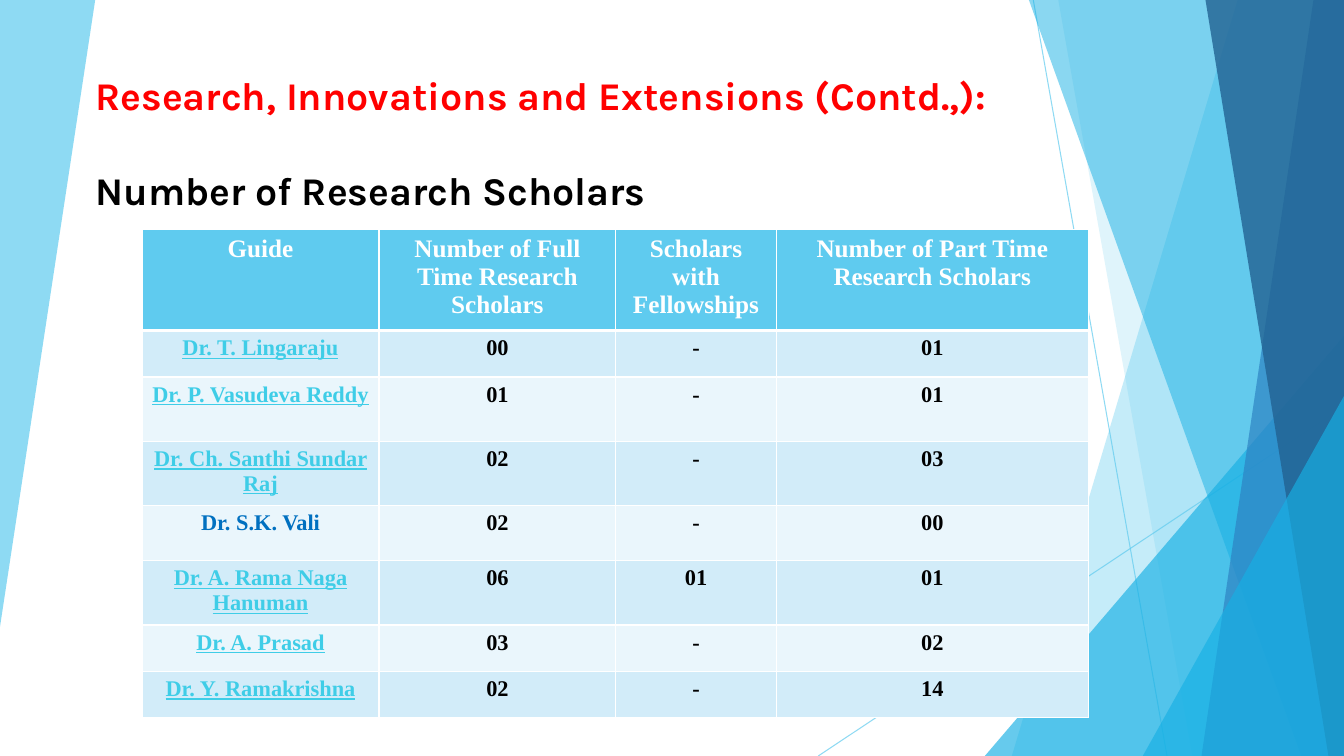
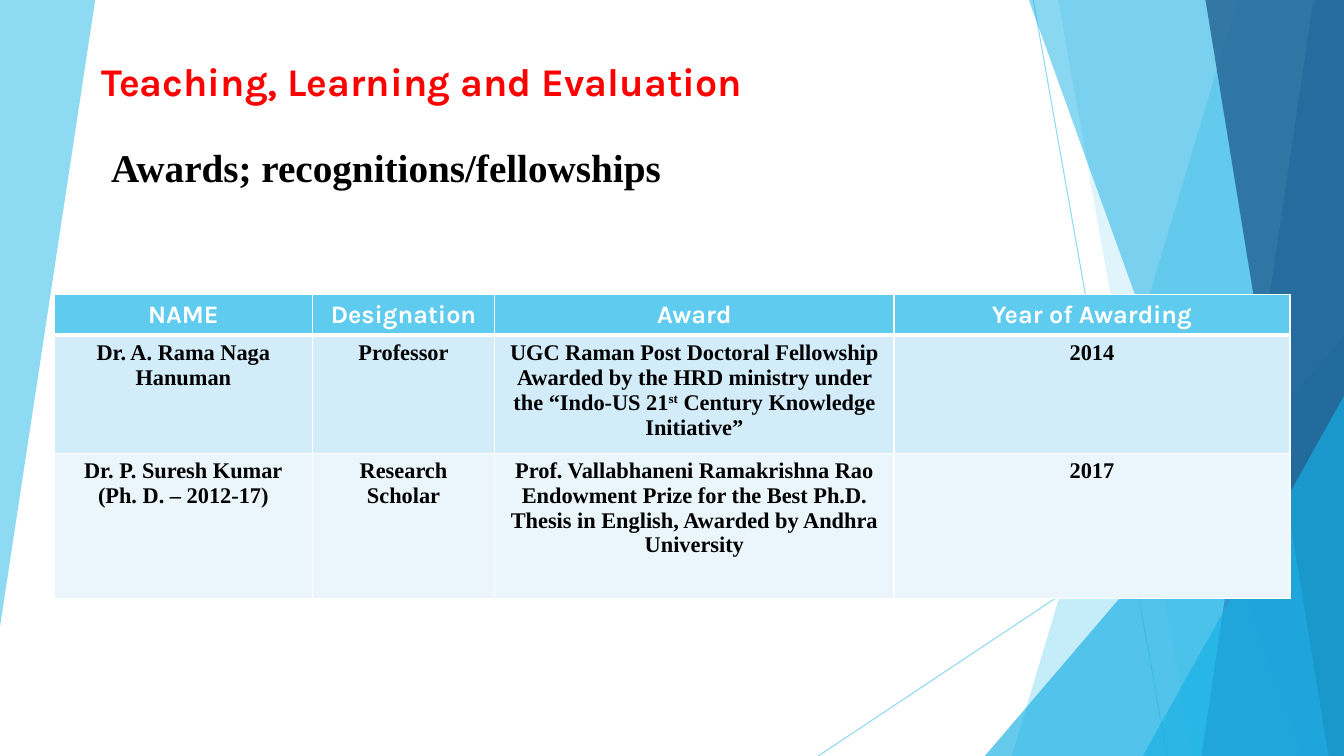
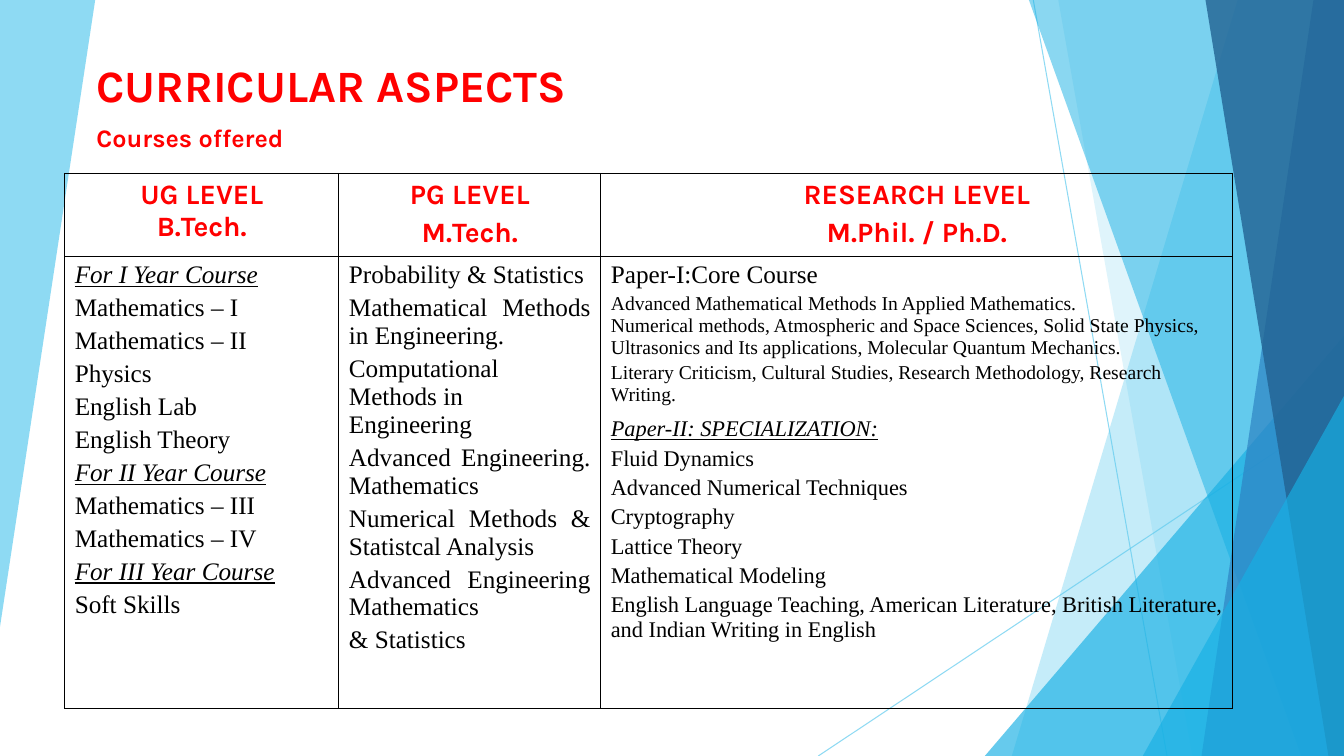
from dataclasses import dataclass, replace

from lxml import etree
from pptx import Presentation
from pptx.dml.color import RGBColor
from pptx.enum.shapes import MSO_CONNECTOR, MSO_SHAPE
from pptx.enum.text import PP_ALIGN
from pptx.oxml.ns import qn
from pptx.util import Cm, Pt

LEFT, CENTER, JUSTIFY = PP_ALIGN.LEFT, PP_ALIGN.CENTER, PP_ALIGN.JUSTIFY
TRIANGLE = MSO_SHAPE.ISOSCELES_TRIANGLE
STRAIGHT = MSO_CONNECTOR.STRAIGHT

SKY = RGBColor(0x5F, 0xCB, 0xEF)
CYAN = RGBColor(0x17, 0xB0, 0xE4)
BLUE = RGBColor(0x2E, 0x83, 0xC3)
NAVY = RGBColor(0x22, 0x62, 0x92)
TURQUOISE = RGBColor(0x3F, 0xCD, 0xE7)
ROYAL = RGBColor(0x00, 0x70, 0xC0)
BAND_DARK = RGBColor(0xD2, 0xEC, 0xF9)
BAND_LIGHT = RGBColor(0xEA, 0xF6, 0xFC)
RED = RGBColor(0xFF, 0x00, 0x00)
BLACK = RGBColor(0x00, 0x00, 0x00)
WHITE = RGBColor(0xFF, 0xFF, 0xFF)

SANS, SERIF = "Karla", "Times New Roman"
WIDTH, HEIGHT = 33.87, 19.05


@dataclass(frozen=True)
class Style:
    """Paragraph look; before is the space above as a share of the size."""
    size: int
    font: str = SERIF
    color: RGBColor = BLACK
    bold: bool = False
    italic: bool = False
    underline: bool = False
    align: int = LEFT
    before: float = 0.2


TITLE = Style(28, SANS, RED, bold=True)
HEADER = Style(18, SERIF, WHITE, bold=True, align=CENTER)
BODY = Style(16, SERIF, BLACK, bold=True, align=CENTER)
GUIDE_LINKED = replace(BODY, color=TURQUOISE, underline=True)
GUIDE_PLAIN = replace(BODY, color=ROYAL)
LEVEL = Style(20, SANS, RED, bold=True, align=CENTER)
COURSE = Style(18, align=JUSTIFY)
YEAR = replace(COURSE, italic=True, underline=True)
PAPER = Style(14)
TOPIC = Style(16, align=JUSTIFY)
SPECIALIZATION = Style(16, italic=True, underline=True, before=0.5)


def write(tf, paragraphs):
    """Fill a text frame with (text, style) pairs; ^ encloses superscript."""
    tf.word_wrap = True
    for i, (text, style) in enumerate(paragraphs):
        p = tf.add_paragraph() if i else tf.paragraphs[0]
        first, *rest = text.split("^")
        p.text = first
        for n, piece in enumerate(rest):
            r = p.add_run()
            r.text = piece
            if n % 2 == 0:
                r._r.get_or_add_rPr().set("baseline", "30000")
        p.alignment = style.align
        if i:
            p.space_before = Pt(style.size * style.before)
        font = p.font
        font.name, font.size = style.font, Pt(style.size)
        font.bold, font.italic = style.bold, style.italic
        font.underline = style.underline
        font.color.rgb = style.color


def add_text(slide, x, y, w, h, text, style):
    box = slide.shapes.add_textbox(Cm(x), Cm(y), Cm(w), Cm(h))
    write(box.text_frame, [(text, style)])


def set_alpha(shape, percent):
    color = shape.element.find(".//" + qn("a:srgbClr"))
    etree.SubElement(color, qn("a:alpha")).set("val", str(percent * 1000))


def paint(sp, color, percent):
    sp.shadow.inherit = False
    sp.fill.solid()
    sp.fill.fore_color.rgb = color
    sp.line.fill.background()
    set_alpha(sp, percent)


def add_polygon(slide, points, color, percent):
    start, *others = [(Cm(x), Cm(y)) for x, y in points]
    builder = slide.shapes.build_freeform(*start)
    builder.add_line_segments(others, close=True)
    paint(builder.convert_to_shape(), color, percent)


def add_band(slide, top_x, bottom_x, color, percent):
    """Full-height band from a slanted left edge to the slide's right edge."""
    points = [(top_x, 0), (WIDTH, 0), (WIDTH, HEIGHT), (bottom_x, HEIGHT)]
    add_polygon(slide, points, color, percent)


def add_corner(slide, x, y):
    """Right triangle filling the bottom right corner from (x, y)."""
    sp = slide.shapes.add_shape(TRIANGLE, Cm(x), Cm(y),
                                Cm(WIDTH - x), Cm(HEIGHT - y))
    sp.adjustments[0] = 1
    paint(sp, CYAN, 66)


def add_hairline(slide, x1, y1, x2, y2):
    line = slide.shapes.add_connector(STRAIGHT, Cm(x1), Cm(y1), Cm(x2), Cm(y2))
    line.line.color.rgb = SKY
    line.line.width = Pt(0.75)
    set_alpha(line, 70)
    etree.SubElement(line.element.spPr, qn("a:effectLst"))


def decorate_layout(layout, slide):
    """Draw the backdrop on an empty slide and move it to the shared layout."""
    for ph in list(layout.placeholders):
        ph.element.getparent().remove(ph.element)
    add_polygon(slide, [(0, 0), (2.4, 0), (0, 15.8)], SKY, 70)
    add_hairline(slide, 26.04, 0, 29.41, HEIGHT)
    add_hairline(slide, WIDTH, 10.24, 20.62, HEIGHT)
    add_band(slide, 31.19, 25.5, SKY, 36)
    add_band(slide, 26.67, 30.05, SKY, 20)
    add_corner(slide, 24.82, 8.46)
    add_band(slide, 25.93, 32.79, CYAN, 50)
    add_band(slide, 33.1, 30.28, BLUE, 70)
    add_band(slide, 30.38, 33.48, NAVY, 80)
    add_corner(slide, 28.8, 9.98)
    for sp in list(slide.shapes):
        layout.shapes.element.append(sp.element)


def set_borders(cell, color, top=1, bottom=1):
    tc_pr = cell._tc.get_or_add_tcPr()
    widths = {"a:lnL": 1, "a:lnR": 1, "a:lnT": top, "a:lnB": bottom}
    for tag, width in widths.items():
        ln = etree.SubElement(tc_pr, qn(tag), w=str(Pt(width)))
        fill = etree.SubElement(ln, qn("a:solidFill"))
        etree.SubElement(fill, qn("a:srgbClr"), val=str(color))


def add_grid(slide, x, y, widths, heights, rows, banded=True):
    """Table whose cells are lists of (text, style) pairs."""
    frame = slide.shapes.add_table(len(heights), len(widths), Cm(x), Cm(y),
                                   Cm(sum(widths)), Cm(sum(heights)))
    table = frame.table
    table.first_row = table.horz_banding = False
    for column, width in zip(table.columns, widths):
        column.width = Cm(width)
    for row, height in zip(table.rows, heights):
        row.height = Cm(height)
    for i, row in enumerate(rows):
        for j, paragraphs in enumerate(row):
            cell = table.cell(i, j)
            write(cell.text_frame, paragraphs)
            if not banded:
                set_borders(cell, BLACK)
                cell.fill.background()
                continue
            set_borders(cell, WHITE, top=3 if i == 1 else 1,
                        bottom=3 if i == 0 else 1)
            cell.fill.solid()
            band = BAND_DARK if i % 2 else BAND_LIGHT
            cell.fill.fore_color.rgb = band if i else SKY


def styled(texts, style):
    return [(text, style) for text in texts]


def cells(texts, style):
    """One single-paragraph cell for each text."""
    return [[pair] for pair in styled(texts, style)]


def scholars_slide(slide):
    add_text(slide, 2.16, 1.68, 23.3, 1.45,
             "Research, Innovations and Extensions (Contd.,):", TITLE)
    add_text(slide, 2.16, 4.06, 22.43, 1.45, "Number of Research Scholars",
             replace(TITLE, color=BLACK))
    header = ["Guide", "Number of Full Time Research Scholars",
              "Scholars with Fellowships",
              "Number of Part Time Research Scholars"]
    scholars = [
        ("Dr. T. Lingaraju", GUIDE_LINKED, "00", "-", "01"),
        ("Dr. P. Vasudeva Reddy", GUIDE_LINKED, "01", "-", "01"),
        ("Dr. Ch. Santhi Sundar Raj", GUIDE_LINKED, "02", "-", "03"),
        ("Dr. S.K. Vali", GUIDE_PLAIN, "02", "-", "00"),
        ("Dr. A. Rama Naga Hanuman", GUIDE_LINKED, "06", "01", "01"),
        ("Dr. A. Prasad", GUIDE_LINKED, "03", "-", "02"),
        ("Dr. Y. Ramakrishna", GUIDE_LINKED, "02", "-", "14"),
    ]
    rows = [cells(header, HEADER)]
    rows += [[[(guide, style)], *cells(counts, BODY)]
             for guide, style, *counts in scholars]
    add_grid(slide, 3.58, 5.79, [5.97, 5.97, 4.04, 7.87],
             [2.54, 1.17, 1.62, 1.62, 1.39, 1.62, 1.17, 1.17], rows)


def awards_slide(slide):
    add_text(slide, 2.31, 1.32, 19.69, 1.45,
             "Teaching, Learning and Evaluation", TITLE)
    add_text(slide, 2.55, 3.48, 27.8, 1.45, "Awards; recognitions/fellowships",
             replace(TITLE, font=SERIF, color=BLACK))
    header = ["NAME", "Designation", "Award", "Year of Awarding"]
    awards = [
        ["Dr. A. Rama Naga Hanuman", "Professor",
         "UGC Raman Post Doctoral Fellowship Awarded by the HRD ministry "
         "under the “Indo-US 21^st^ Century Knowledge Initiative”", "2014"],
        ["Dr. P. Suresh Kumar\n(Ph. D. – 2012-17)", "Research Scholar",
         "Prof. Vallabhaneni Ramakrishna Rao Endowment Prize for the Best "
         "Ph.D. Thesis in English, Awarded by Andhra University", "2017"],
    ]
    rows = [cells(header, replace(HEADER, font=SANS))]
    rows += [cells(award, BODY) for award in awards]
    add_grid(slide, 1.37, 7.43, [6.5, 4.6, 10.06, 9.98],
             [1.02, 2.97, 3.66], rows)


def courses_slide(slide):
    add_text(slide, 2.18, 1.32, 15.95, 1.63, "CURRICULAR ASPECTS",
             replace(TITLE, size=32))
    add_text(slide, 2.18, 2.95, 18.87, 1.02, "Courses offered",
             replace(TITLE, size=18))
    levels = [["UG LEVEL\nB.Tech."], ["PG LEVEL", "M.Tech."],
              ["RESEARCH LEVEL", "M.Phil. / Ph.D."]]
    undergraduate = [
        ("For I Year Course", YEAR),
        *styled(["Mathematics – I", "Mathematics – II", "Physics",
                 "English Lab", "English Theory"], COURSE),
        ("For II Year Course", YEAR),
        *styled(["Mathematics – III", "Mathematics – IV"], COURSE),
        ("For III Year Course", YEAR),
        ("Soft Skills", COURSE),
    ]
    postgraduate = [
        *styled(["Probability & Statistics",
                 "Mathematical Methods in Engineering."], COURSE),
        ("Computational Methods in Engineering", replace(COURSE, align=LEFT)),
        *styled(["Advanced Engineering. Mathematics",
                 "Numerical Methods & Statistcal Analysis",
                 "Advanced Engineering Mathematics", "& Statistics"], COURSE),
    ]
    research = [
        ("Paper-I:Core Course", COURSE),
        *styled(["Advanced Mathematical Methods In Applied Mathematics.\n"
                 "Numerical methods, Atmospheric and Space Sciences, Solid "
                 "State Physics, Ultrasonics and Its applications, Molecular "
                 "Quantum Mechanics.",
                 "Literary Criticism, Cultural Studies, Research Methodology, "
                 "Research Writing."], PAPER),
        ("Paper-II: SPECIALIZATION:", SPECIALIZATION),
        *styled(["Fluid Dynamics", "Advanced Numerical Techniques",
                 "Cryptography", "Lattice Theory", "Mathematical Modeling",
                 "English Language Teaching, American Literature, British "
                 "Literature, and Indian Writing in English"], TOPIC),
    ]
    rows = [[styled(level, LEVEL) for level in levels],
            [undergraduate, postgraduate, research]]
    add_grid(slide, 1.63, 4.37, [6.91, 6.6, 15.93], [2.08, 11.4], rows,
             banded=False)


def main():
    prs = Presentation()
    prs.slide_width, prs.slide_height = Cm(WIDTH), Cm(HEIGHT)
    blank = prs.slide_layouts[6]
    slides = [prs.slides.add_slide(blank) for _ in range(3)]
    decorate_layout(blank, slides[0])
    for build, slide in zip((scholars_slide, awards_slide, courses_slide),
                            slides):
        build(slide)
    prs.save("out.pptx")


if __name__ == "__main__":
    main()
